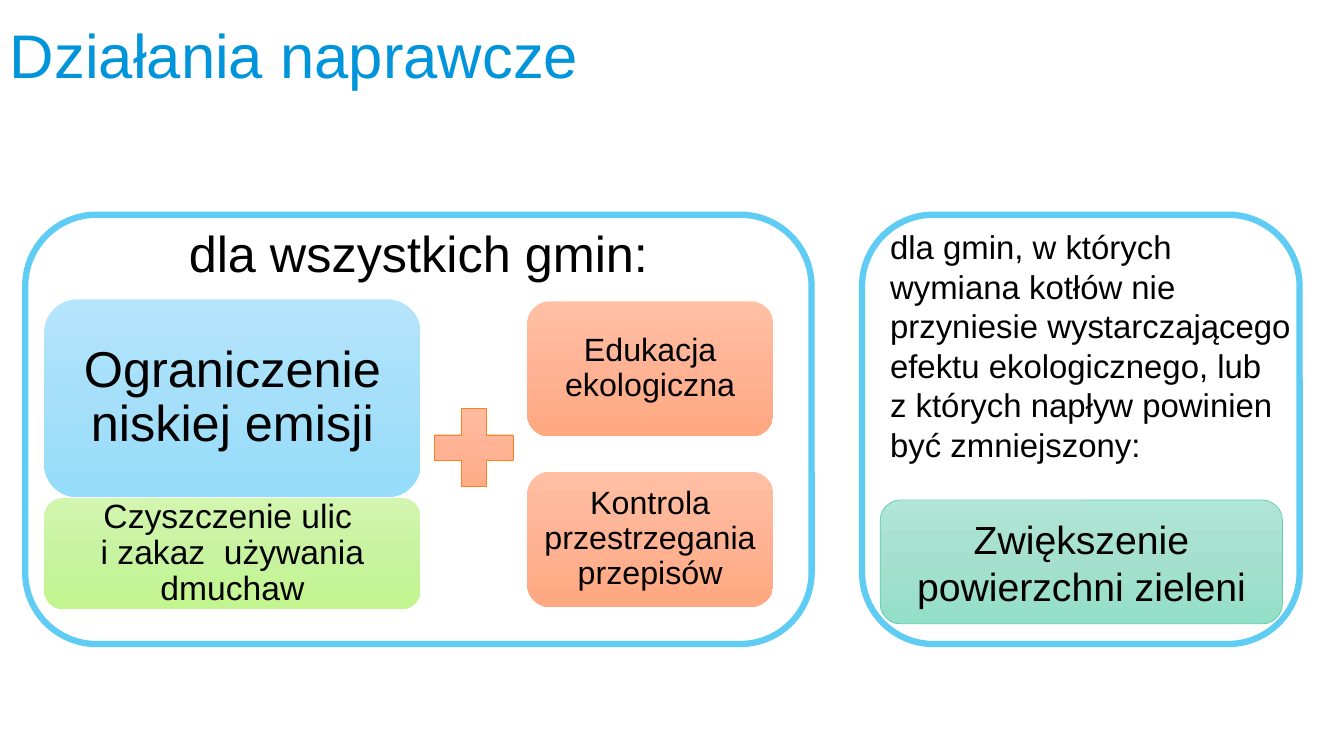
from copy import deepcopy
from dataclasses import dataclass

from pptx import Presentation
from pptx.dml.color import RGBColor
from pptx.enum.shapes import MSO_SHAPE
from pptx.enum.text import MSO_ANCHOR, PP_ALIGN
from pptx.oxml.ns import qn
from pptx.util import Inches, Pt

ROUND = MSO_SHAPE.ROUNDED_RECTANGLE
PLUS = MSO_SHAPE.MATH_PLUS
LEFT, CENTER = PP_ALIGN.LEFT, PP_ALIGN.CENTER
TOP, MIDDLE = MSO_ANCHOR.TOP, MSO_ANCHOR.MIDDLE

Stops = tuple[str, str, str]
Rect = tuple[float, float, float, float]


@dataclass(frozen=True)
class Theme:
    font: str = "Arial"
    title: str = "0094DA"
    ink: str = "000000"
    paper: str = "FFFFFF"
    frame: str = "5ECCF3"
    orange: Stops = ("FFBFA3", "FFB394", "FFA881")
    blue: Stops = ("B5E5FB", "A6DFF9", "95DDFB")
    lime: Stops = ("D2F5AF", "C8F3A0", "C2F58F")
    green: Stops = ("B1E5D5", "A4E0CD", "93DFC7")
    rust: str = "FF8021"
    teal: str = "5DCEAF"
    huge: float = 44
    large: float = 36
    mid: float = 28
    text: float = 24
    note: float = 23.5
    small: float = 23


THEME = Theme()


@dataclass(frozen=True)
class Card:
    rect: Rect
    stops: Stops
    text: str = ""
    size: float = THEME.small
    inset: float = 0.1
    space: float = 0.9
    edge: str = ""
    kind: int = ROUND


@dataclass(frozen=True)
class Label:
    rect: Rect
    text: str
    size: float
    color: str = THEME.ink
    align: int = LEFT
    anchor: int = TOP
    space: float = 1.0


FRAMES: list[Rect] = [(8.55, 2.13, 4.34, 4.26), (0.25, 2.13, 7.8, 4.26)]

CARDS = [
    Card((4.17, 3.91, 1.06, 1.06), THEME.orange, edge=THEME.rust, kind=PLUS),
    Card((5.23, 2.99, 2.44, 1.34), THEME.orange, "Edukacja ekologiczna"),
    Card((5.23, 4.68, 2.44, 1.34), THEME.orange, "Kontrola przestrzegania przepisów"),
    Card((0.44, 2.97, 3.73, 1.96), THEME.blue, "Ograniczenie niskiej emisji",
         THEME.large, 0.15),
    Card((0.44, 4.94, 3.73, 1.1), THEME.lime,
         "Czyszczenie ulic \vi zakaz  używania dmuchaw", THEME.text),
    Card((8.73, 4.96, 3.99, 1.23), THEME.green, "Zwiększenie powierzchni zieleni",
         THEME.mid, space=1.0, edge=THEME.teal),
]

LABELS = [
    Label((0, 0.19, 6.13, 0.79), "Działania naprawcze", THEME.huge, THEME.title,
          anchor=MIDDLE, space=0.9),
    Label((0.44, 2.15, 7.42, 0.71), "dla wszystkich gmin:", THEME.large, align=CENTER),
    Label((8.73, 2.2, 4.26, 2.47),
          "dla gmin, w których wymiana kotłów nie przyniesie wystarczającego "
          "efektu ekologicznego, lub\nz których napływ powinien być zmniejszony:",
          THEME.note),
]


def place(rect: Rect) -> list[int]:
    return [Inches(side) for side in rect]


def write(frame, text: str, size: float, color: str, align: int, anchor: int,
          space: float) -> None:
    frame.word_wrap = True
    frame.vertical_anchor = anchor
    frame.text = text
    for para in frame.paragraphs:
        para.alignment = align
        para.line_spacing = space
        for run in para.runs:
            run.font.name = THEME.font
            run.font.size = Pt(size)
            run.font.color.rgb = RGBColor.from_string(color)


def shade(shape, stops: Stops) -> None:
    shape.fill.gradient()
    shape.fill.gradient_angle = 270
    group = shape._element.spPr.find(qn("a:gradFill")).find(qn("a:gsLst"))
    group.insert(1, deepcopy(group[0]))
    for step, (stop, color) in enumerate(zip(shape.fill.gradient_stops, stops)):
        stop.position = step / 2
        stop.color.rgb = RGBColor.from_string(color)


def outline(shape, color: str, width: float) -> None:
    if color:
        shape.line.color.rgb = RGBColor.from_string(color)
        shape.line.width = Pt(width)
    else:
        shape.line.fill.background()


def add_frame(slide, rect: Rect) -> None:
    shape = slide.shapes.add_shape(ROUND, *place(rect))
    shape.shadow.inherit = False
    shape.fill.solid()
    shape.fill.fore_color.rgb = RGBColor.from_string(THEME.paper)
    outline(shape, THEME.frame, 4.5)


def add_card(slide, card: Card) -> None:
    shape = slide.shapes.add_shape(card.kind, *place(card.rect))
    shape.shadow.inherit = False
    shade(shape, card.stops)
    outline(shape, card.edge, 0.5)
    if card.text:
        frame = shape.text_frame
        frame.margin_left = frame.margin_right = Inches(card.inset)
        frame.margin_top = frame.margin_bottom = Inches(card.inset)
        write(frame, card.text, card.size, THEME.ink, CENTER, MIDDLE, card.space)


def add_label(slide, label: Label) -> None:
    box = slide.shapes.add_textbox(*place(label.rect))
    write(box.text_frame, label.text, label.size, label.color, label.align,
          label.anchor, label.space)


def main() -> None:
    deck = Presentation()
    deck.slide_width, deck.slide_height = Inches(13.33), Inches(7.5)
    slide = deck.slides.add_slide(deck.slide_layouts[6])
    for rect in FRAMES:
        add_frame(slide, rect)
    for card in CARDS:
        add_card(slide, card)
    for label in LABELS:
        add_label(slide, label)
    deck.save("out.pptx")


if __name__ == "__main__":
    main()
